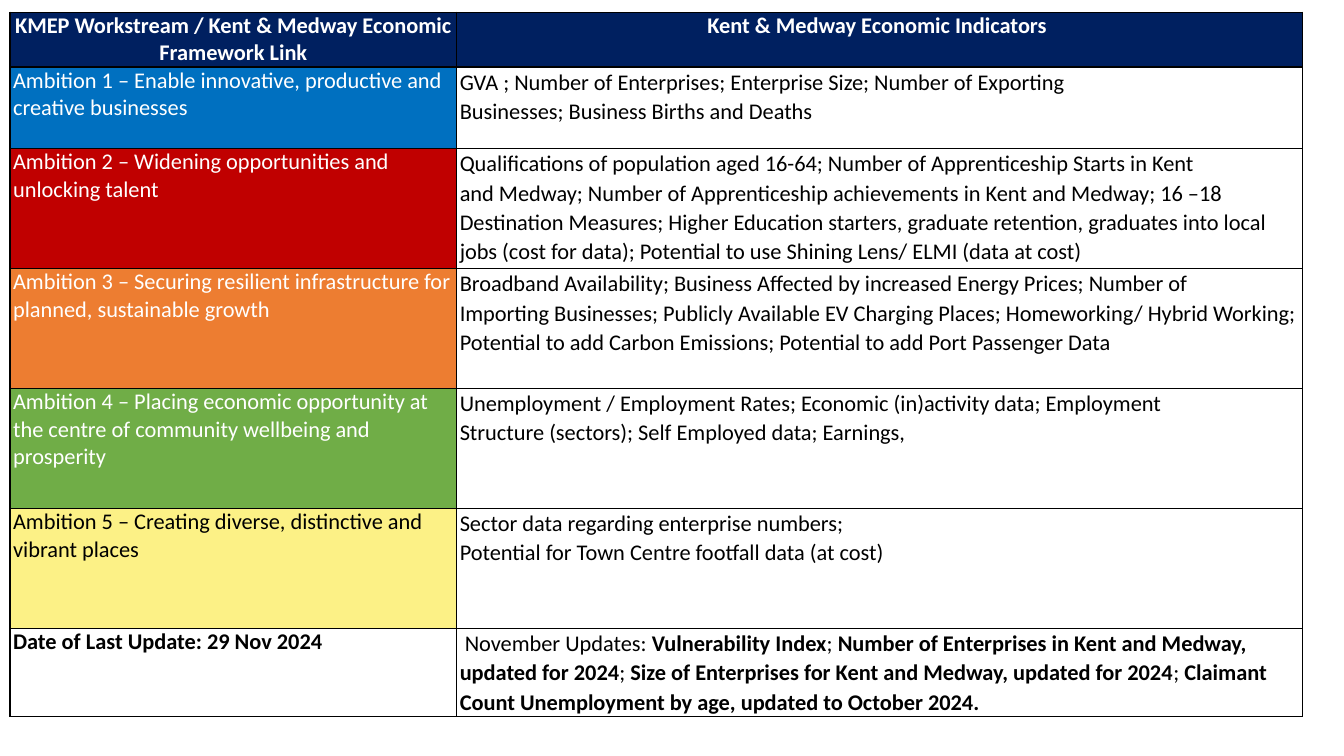
from dataclasses import dataclass

from lxml import etree
from pptx import Presentation, util as u
from pptx.dml.color import RGBColor
from pptx.enum import text
from pptx.oxml import ns

PX = 9144  # EMU per px, 100 px to the inch
WHITE, BLACK, NAVY = "FFFFFF", "000000", "002060"
COLUMN_WIDTHS = (443, 839)
BOLD_MARK = "*"
HARD_SPACE_MARK, HARD_SPACE = "~", chr(160)


@dataclass(frozen=True)
class IndicatorRow:
    height: int
    link: str
    indicators: tuple[str, ...]
    link_fill: str | None = None
    link_color: str = WHITE


HEADER = IndicatorRow(
    49,
    "*KMEP Workstream / Kent & Medway Economic Framework Link*",
    ("*Kent & Medway Economic Indicators~*",),
    NAVY,
)
ROWS = (
    IndicatorRow(
        81,
        "Ambition 1 – Enable innovative, productive and creative businesses",
        ("GVA ; Number of Enterprises; Enterprise Size; Number of Exporting "
         "Businesses;~Business~Births and Deaths~",),
        "0070C0",
    ),
    IndicatorRow(
        119,
        "Ambition 2 – Widening opportunities and unlocking talent",
        ("Qualifications of population aged 16-64; Number of Apprenticeship Starts in Kent "
         "and~Medway; Number of Apprenticeship achievements in Kent and Medway; 16 –18 "
         "Destination~Measures;~Higher Education starters, graduate retention, graduates "
         "into local jobs (cost for~data); Potential to use Shining Lens/ ELMI "
         "(data at cost)",),
        "C00000",
    ),
    IndicatorRow(
        119,
        "Ambition 3 – Securing resilient infrastructure for planned, sustainable growth",
        ("Broadband Availability; Business Affected by increased Energy Prices; Number of "
         "Importing~Businesses; Publicly Available EV Charging Places; Homeworking/ Hybrid "
         "Working; Potential~to add Carbon Emissions; Potential to add Port Passenger Data",),
        "ED7D31",
    ),
    IndicatorRow(
        119,
        "Ambition 4 – Placing economic opportunity at the centre of community wellbeing "
        "and prosperity",
        ("Unemployment / Employment Rates; Economic (in)activity data; Employment "
         "Structure~(sectors); Self Employed data; Earnings,",),
        "70AD47",
    ),
    IndicatorRow(
        119,
        "Ambition 5 – Creating diverse, distinctive and vibrant places",
        ("Sector data regarding enterprise numbers;~",
         "Potential for Town Centre footfall data (at cost)~"),
        "FCF186",
        BLACK,
    ),
    IndicatorRow(
        66,
        "*Date of Last Update: 29 Nov 2024*",
        ("~November Updates: *Vulnerability Index*;~*Number of Enterprises in Kent and "
         "Medway, updated for 2024*; *Size of Enterprises for Kent and Medway, updated for "
         "2024*; *Claimant Count Unemployment by age, updated to October 2024.*",),
        link_color=BLACK,
    ),
)


def px(length: int) -> u.Emu:
    return u.Emu(length * PX)


def rgb(color: str) -> RGBColor:
    return RGBColor.from_string(color)


def add_borders(cell) -> None:
    properties = cell._tc.get_or_add_tcPr()
    for index, side in enumerate(("lnL", "lnR", "lnT", "lnB")):
        line = etree.Element(ns.qn(f"a:{side}"), w=str(u.Pt(1)))
        solid = etree.SubElement(line, ns.qn("a:solidFill"))
        etree.SubElement(solid, ns.qn("a:srgbClr"), val=BLACK)
        properties.insert(index, line)


def write_cell(cell, paragraphs: tuple[str, ...], color: str, fill: str | None,
               align: text.PP_ALIGN = text.PP_ALIGN.LEFT, spacing: float = 1.0) -> None:
    """Fill and border a cell; text between bold marks becomes bold."""
    if fill:
        cell.fill.solid()
        cell.fill.fore_color.rgb = rgb(fill)
    else:
        cell.fill.background()
    add_borders(cell)
    cell.margin_left = cell.margin_right = px(3)
    cell.margin_top = cell.margin_bottom = 0

    frame = cell.text_frame
    for number, marked in enumerate(paragraphs):
        paragraph = frame.add_paragraph() if number else frame.paragraphs[0]
        paragraph.alignment = align
        paragraph.line_spacing = spacing
        for part, wording in enumerate(marked.split(BOLD_MARK)):
            if not wording:
                continue
            run = paragraph.add_run()
            run.text = wording.replace(HARD_SPACE_MARK, HARD_SPACE)
            run.font.name = "Calibri"
            run.font.size = u.Pt(16)
            run.font.bold = part % 2 == 1
            run.font.color.rgb = rgb(color)


def add_indicator_table(slide) -> None:
    rows = (HEADER, *ROWS)
    table = slide.shapes.add_table(
        len(rows), len(COLUMN_WIDTHS), px(10), px(12),
        px(sum(COLUMN_WIDTHS)), px(sum(row.height for row in rows)),
    ).table
    table.first_row = table.horz_banding = False
    for column, width in zip(table.columns, COLUMN_WIDTHS):
        column.width = px(width)
    for index, row in enumerate(rows):
        table.rows[index].height = px(row.height)
        link, indicators = table.cell(index, 0), table.cell(index, 1)
        if row is HEADER:
            for cell, wording in ((link, (row.link,)), (indicators, row.indicators)):
                write_cell(cell, wording, WHITE, NAVY, text.PP_ALIGN.CENTER)
        else:
            write_cell(link, (row.link,), row.link_color, row.link_fill)
            write_cell(indicators, row.indicators, BLACK, None, spacing=1.07)


def main() -> None:
    deck = Presentation()
    deck.slide_width, deck.slide_height = px(1333), px(750)
    add_indicator_table(deck.slides.add_slide(deck.slide_layouts[6]))
    deck.save("out.pptx")


if __name__ == "__main__":
    main()
